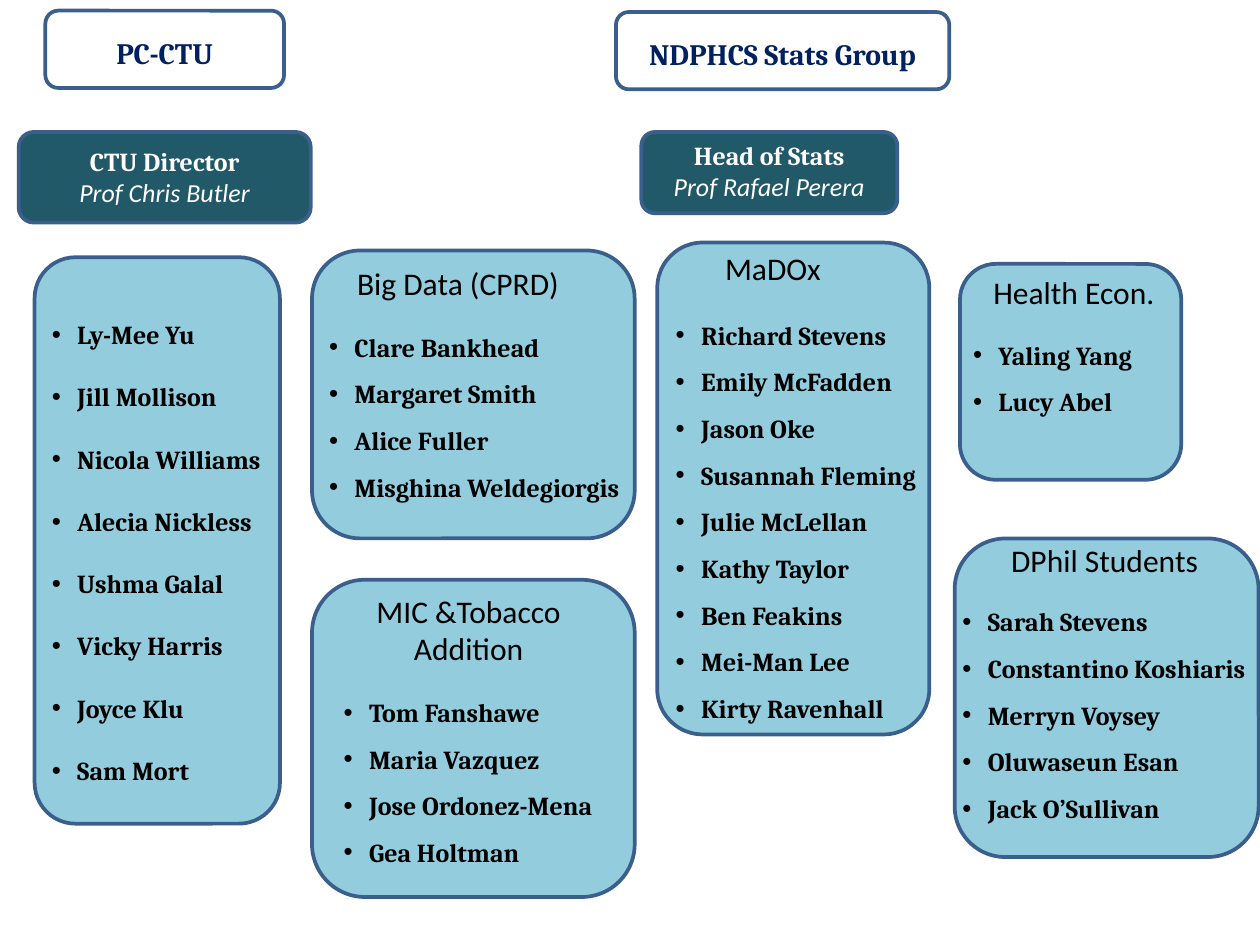
from dataclasses import dataclass

import pptx
import pptx.dml.color
import pptx.enum.shapes
import pptx.enum.text
import pptx.util
from lxml import etree

Inches = pptx.util.Inches
ALIGN = pptx.enum.text.PP_ALIGN
Box = tuple[float, float, float, float]

WHITE, BLACK, NAVY = "FFFFFF", "000000", "002060"
TEAL, SKY, OUTLINE = "215968", "93CDDD", "3A5F8C"
HEADING_FONT, BODY_FONT = "Cambria", "Calibri"


@dataclass
class Banner:
    panel: Box
    text_box: Box
    text: str


@dataclass
class Leader:
    panel: Box
    text_box: Box
    role: str
    person: str
    wrap: bool = False


@dataclass
class Team:
    panel: Box
    list_box: Box
    members: list[str]
    title: str = ""
    title_box: Box | None = None
    title_align: ALIGN = ALIGN.CENTER
    spacing: float = 1.5
    wrap: bool = False


BANNERS = [
    Banner((0.34, 0.08, 1.79, 0.58), (0.75, 0.21, 0.97, 0.37), "PC-CTU"),
    Banner((4.62, 0.09, 2.5, 0.58), (4.72, 0.22, 2.3, 0.37), "NDPHCS Stats Group"),
]
LEADERS = [
    Leader((0.14, 0.99, 2.19, 0.68), (-0.06, 1.04, 2.59, 0.57),
           "CTU Director", "Prof Chris Butler", wrap=True),
    Leader((4.81, 0.99, 1.92, 0.61), (4.95, 1, 1.64, 0.57),
           "Head of Stats", "Prof Rafael Perera"),
]
TEAMS = [
    Team((0.26, 1.93, 1.84, 4.25), (0.29, 2.11, 1.8, 3.8),
         ["Ly-Mee Yu", "Jill Mollison", "Nicola Williams", "Alecia Nickless",
          "Ushma Galal", "Vicky Harris", "Joyce Klu", "Sam Mort"], spacing=2.0),
    Team((2.34, 1.88, 2.42, 2.16), (2.37, 2.32, 2.44, 1.51),
         ["Clare Bankhead", "Margaret Smith", "Alice Fuller", "Misghina Weldegiorgis"],
         "Big Data (CPRD)", (2.58, 1.93, 1.87, 0.39), ALIGN.LEFT),
    Team((4.93, 1.82, 2.04, 3.69), (4.97, 2.23, 2.04, 3.28),
         ["Richard Stevens", "Emily McFadden", "Jason Oke", "Susannah Fleming",
          "Julie McLellan", "Kathy Taylor", "Ben Feakins", "Mei-Man Lee",
          "Kirty Ravenhall"],
         "MaDOx", (5.34, 1.82, 1.24, 0.39), ALIGN.LEFT),
    Team((2.34, 4.35, 2.42, 2.38), (2.48, 5.06, 2.14, 1.51),
         ["Tom Fanshawe", "Maria Vazquez", "Jose Ordonez-Mena", "Gea Holtman"],
         "MIC &Tobacco Addition", (2.58, 4.39, 1.87, 0.67)),
    Team((7.2, 1.98, 1.66, 1.62), (7.2, 2.38, 1.42, 0.81),
         ["Yaling Yang", "Lucy Abel"],
         "Health Econ.", (7.12, 2, 1.87, 0.39)),
    Team((7.16, 4.04, 2.28, 2.39), (7.12, 4.38, 2.9, 1.82),
         ["Sarah Stevens", "Constantino Koshiaris", "Merryn Voysey",
          "Oluwaseun Esan", "Jack O’Sullivan"],
         "DPhil Students", (7.35, 4.01, 1.87, 0.39), wrap=True),
]


def color(value: str) -> pptx.dml.color.RGBColor:
    return pptx.dml.color.RGBColor.from_string(value)


def add_panel(slide, box: Box, fill: str) -> None:
    shape = slide.shapes.add_shape(
        pptx.enum.shapes.MSO_SHAPE.ROUNDED_RECTANGLE, *map(Inches, box))
    shape.shadow.inherit = False
    shape.fill.solid()
    shape.fill.fore_color.rgb = color(fill)
    shape.line.color.rgb = color(OUTLINE)
    shape.line.width = pptx.util.Pt(2)


def add_text(slide, box: Box, lines: list[str], wrap: bool, align: ALIGN) -> list:
    frame = slide.shapes.add_textbox(*map(Inches, box)).text_frame
    frame.word_wrap = wrap
    frame.auto_size = pptx.enum.text.MSO_AUTO_SIZE.SHAPE_TO_FIT_TEXT
    frame.text = "\n".join(lines)
    for paragraph in frame.paragraphs:
        paragraph.alignment = align
    return list(frame.paragraphs)


def set_font(paragraph, name: str, size: int, ink: str,
             bold: bool = False, italic: bool = False) -> None:
    font = paragraph.font
    font.name, font.size = name, pptx.util.Pt(size)
    font.bold, font.italic = bold, italic
    font.color.rgb = color(ink)


def add_bullet(paragraph) -> None:
    properties = paragraph._p.get_or_add_pPr()
    properties.set("marL", str(Inches(0.19)))
    properties.set("indent", str(Inches(-0.19)))
    namespace = pptx.oxml.ns.qn
    etree.SubElement(properties, namespace("a:buFont"), typeface="Arial")
    etree.SubElement(properties, namespace("a:buChar"), char="•")


def draw_banner(slide, banner: Banner) -> None:
    add_panel(slide, banner.panel, WHITE)
    [paragraph] = add_text(slide, banner.text_box, [banner.text], False, ALIGN.CENTER)
    set_font(paragraph, HEADING_FONT, 16, NAVY, bold=True)


def draw_leader(slide, leader: Leader) -> None:
    add_panel(slide, leader.panel, TEAL)
    role, person = add_text(slide, leader.text_box, [leader.role, leader.person],
                            leader.wrap, ALIGN.CENTER)
    set_font(role, HEADING_FONT, 14, WHITE, bold=True)
    set_font(person, BODY_FONT, 14, WHITE, italic=True)


def draw_team(slide, team: Team) -> None:
    add_panel(slide, team.panel, SKY)
    for paragraph in add_text(slide, team.list_box, team.members, team.wrap, ALIGN.LEFT):
        paragraph.line_spacing = team.spacing
        add_bullet(paragraph)
        set_font(paragraph, HEADING_FONT, 14, BLACK, bold=True)
    if team.title_box:
        [title] = add_text(slide, team.title_box, [team.title], True, team.title_align)
        set_font(title, BODY_FONT, 17, BLACK)


def main() -> None:
    presentation = pptx.Presentation()
    presentation.slide_width = Inches(9.45)
    presentation.slide_height = Inches(7.09)
    slide = presentation.slides.add_slide(presentation.slide_layouts[6])

    # Group names
    for banner in BANNERS:
        draw_banner(slide, banner)
    # Heads of the groups
    for leader in LEADERS:
        draw_leader(slide, leader)
    # Teams and their members
    for team in TEAMS:
        draw_team(slide, team)

    presentation.save("out.pptx")


if __name__ == "__main__":
    main()
